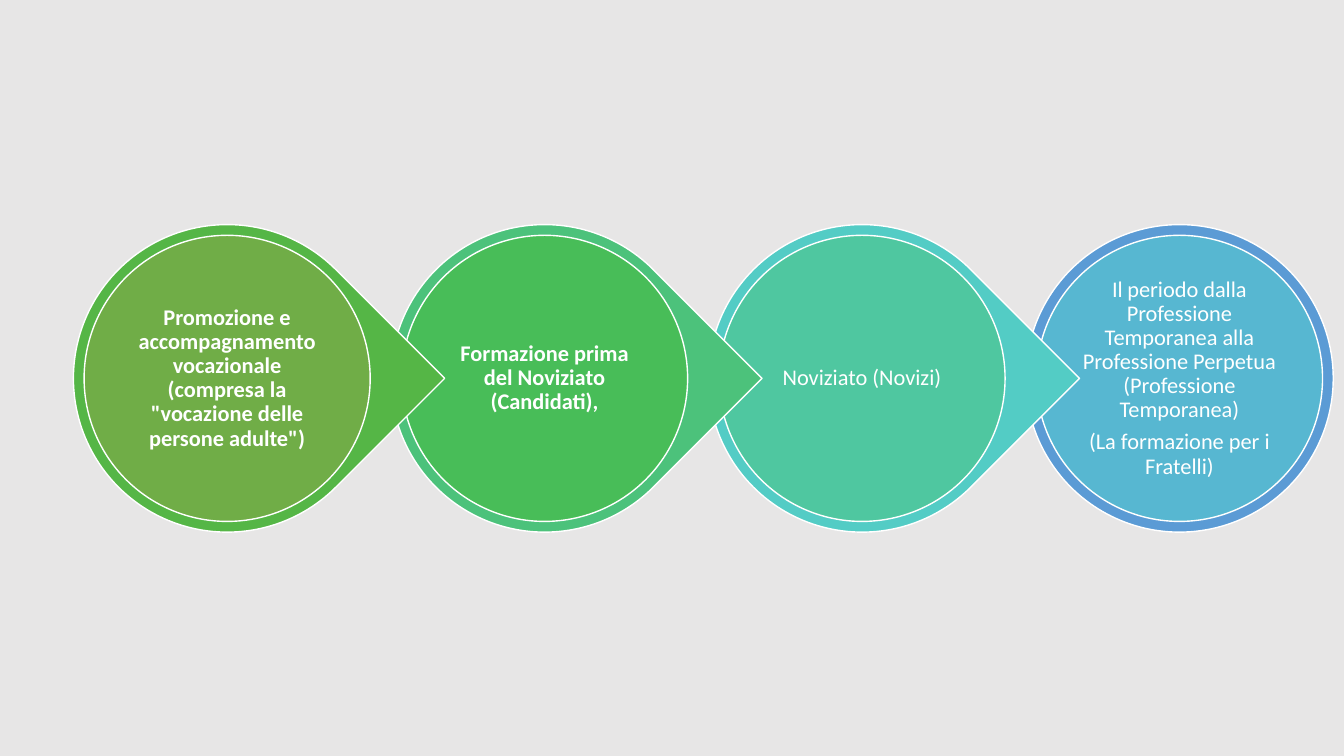
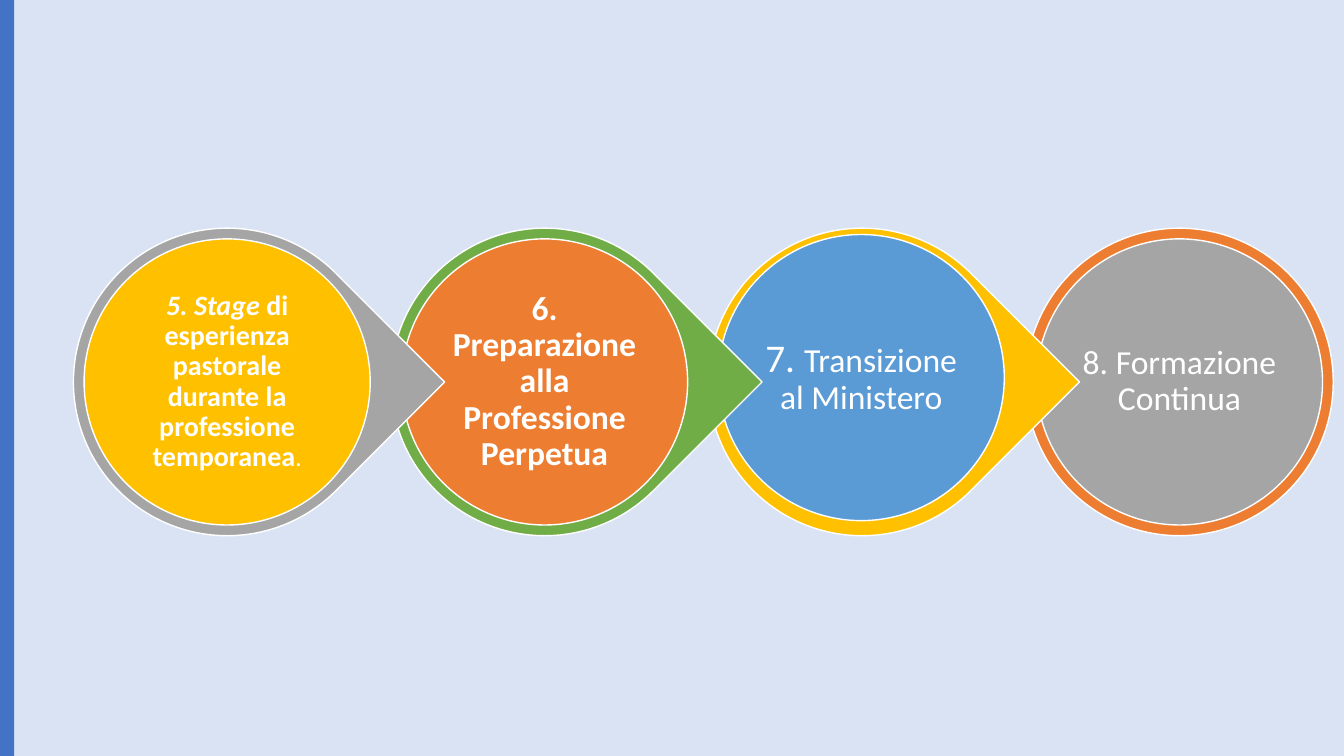
from pptx import Presentation
from pptx.dml.color import RGBColor
from pptx.enum.shapes import MSO_SHAPE
from pptx.enum.text import MSO_ANCHOR, PP_ALIGN
from pptx.util import Cm, Pt

OVAL, DROP, RECT = MSO_SHAPE.OVAL, MSO_SHAPE.TEAR, MSO_SHAPE.RECTANGLE
CENTER, MIDDLE = PP_ALIGN.CENTER, MSO_ANCHOR.MIDDLE

WIDE, HIGH = 33.87, 19.05
LEFT, PITCH = 1.85, 8.0      # first ring and step to the next
RING, DISC = 7.75, 7.21      # diameters
COLORS = {
    "white": "FFFFFF", "pale": "E7E6E6", "mist": "DAE3F3", "navy": "4472C4",
    "blue": "5B9BD5", "sky": "57B7D1", "aqua": "53CCC5", "teal": "4FC7A0",
    "mint": "4CC27B", "green": "48BD58", "leaf": "55B646", "moss": "70AD47",
    "orange": "ED7D31", "gray": "A5A5A5", "gold": "FFC000",
}


class Deck:
    """Holds the style and the current slide."""
    font = "Calibri"

    def __init__(self):
        self.prs = Presentation()
        self.prs.slide_width, self.prs.slide_height = Cm(WIDE), Cm(HIGH)
        self.slide = None

    def color(self, name):
        return RGBColor.from_string(COLORS[name])

    def page(self, back):
        self.slide = self.prs.slides.add_slide(self.prs.slide_layouts[6])
        fill = self.slide.background.fill
        fill.solid()
        fill.fore_color.rgb = self.color(back)

    def shape(self, kind, x, y, w, h, fill, line=None):
        item = self.slide.shapes.add_shape(kind, Cm(x), Cm(y), Cm(w), Cm(h))
        item.shadow.inherit = False
        item.fill.solid()
        item.fill.fore_color.rgb = self.color(fill)
        if line:
            item.line.color.rgb = self.color(line)
            item.line.width = Pt(1)
        else:
            item.line.fill.background()
        return item

    def text(self, item, paras):
        """Each paragraph is a list of (text, size, style) runs."""
        frame = item.text_frame
        frame.word_wrap = True
        frame.vertical_anchor = MIDDLE
        frame.margin_left = frame.margin_right = Cm(0.05)
        frame.margin_top = frame.margin_bottom = Cm(0.05)
        for i, runs in enumerate(paras):
            para = frame.paragraphs[0] if i == 0 else frame.add_paragraph()
            para.alignment = CENTER
            para.line_spacing = 0.9
            para.space_after = Pt(0.35 * max(size for _, size, _ in runs))
            for words, size, style in runs:
                run = para.add_run()
                run.text = words
                font = run.font
                font.name, font.size = self.font, Pt(size)
                font.bold, font.italic = "b" in style, "i" in style
                font.color.rgb = self.color("white")

    def chain(self, top, steps):
        """Draws from right to left, so each tip lies over the next disc."""
        last = len(steps) - 1
        edge = (RING - DISC) / 2
        for i in range(last, -1, -1):
            ring, fill, (dx, dy), paras = steps[i]
            x = LEFT + i * PITCH
            kind = OVAL if i == last else DROP
            rim = self.shape(kind, x, top, RING, RING, ring, "white")
            if i < last:
                rim.rotation = 45
            disc = self.shape(OVAL, x + edge + dx, top + edge + dy,
                              DISC, DISC, fill, "white")
            self.text(disc, paras)


def main():
    deck = Deck()
    flush = (0, 0)

    # Stages one to four
    deck.page("pale")
    deck.chain(5.66, [
        ("leaf", "moss", flush, [[
            ("Promozione e accompagnamento vocazionale (compresa la "
             '"vocazione delle persone adulte")', 16, "b")]]),
        ("mint", "green", flush, [[
            ("Formazione prima del Noviziato (Candidati),", 16, "b")]]),
        ("aqua", "teal", flush, [[("Noviziato (Novizi)", 16, "")]]),
        ("blue", "sky", flush, [
            [("Il", 16, ""), (" ", 14, ""),
             ("periodo dalla Professione Temporanea alla Professione "
              "Perpetua (Professione Temporanea)", 16, "")],
            [("(La formazione per i Fratelli)", 16, "")]]),
    ])

    # Stages five to eight, with a side band
    deck.page("mist")
    deck.shape(RECT, 0, 0, 0.36, HIGH, "navy")
    deck.chain(5.75, [
        ("gray", "gold", flush, [[
            ("5. Stage", 20, "bi"),
            (" di esperienza pastorale durante la professione temporanea",
             20, "b"),
            (".", 18, "")]]),
        ("moss", "orange", flush, [[
            ("6. Preparazione alla Professione Perpetua", 24, "b")]]),
        ("gold", "blue", (-0.02, -0.11), [[
            ("7. ", 28, ""), ("Transizione al Ministero", 24, "")]]),
        ("orange", "gray", flush, [[("8. Formazione Continua", 24, "")]]),
    ])

    deck.prs.save("out.pptx")


if __name__ == "__main__":
    main()
